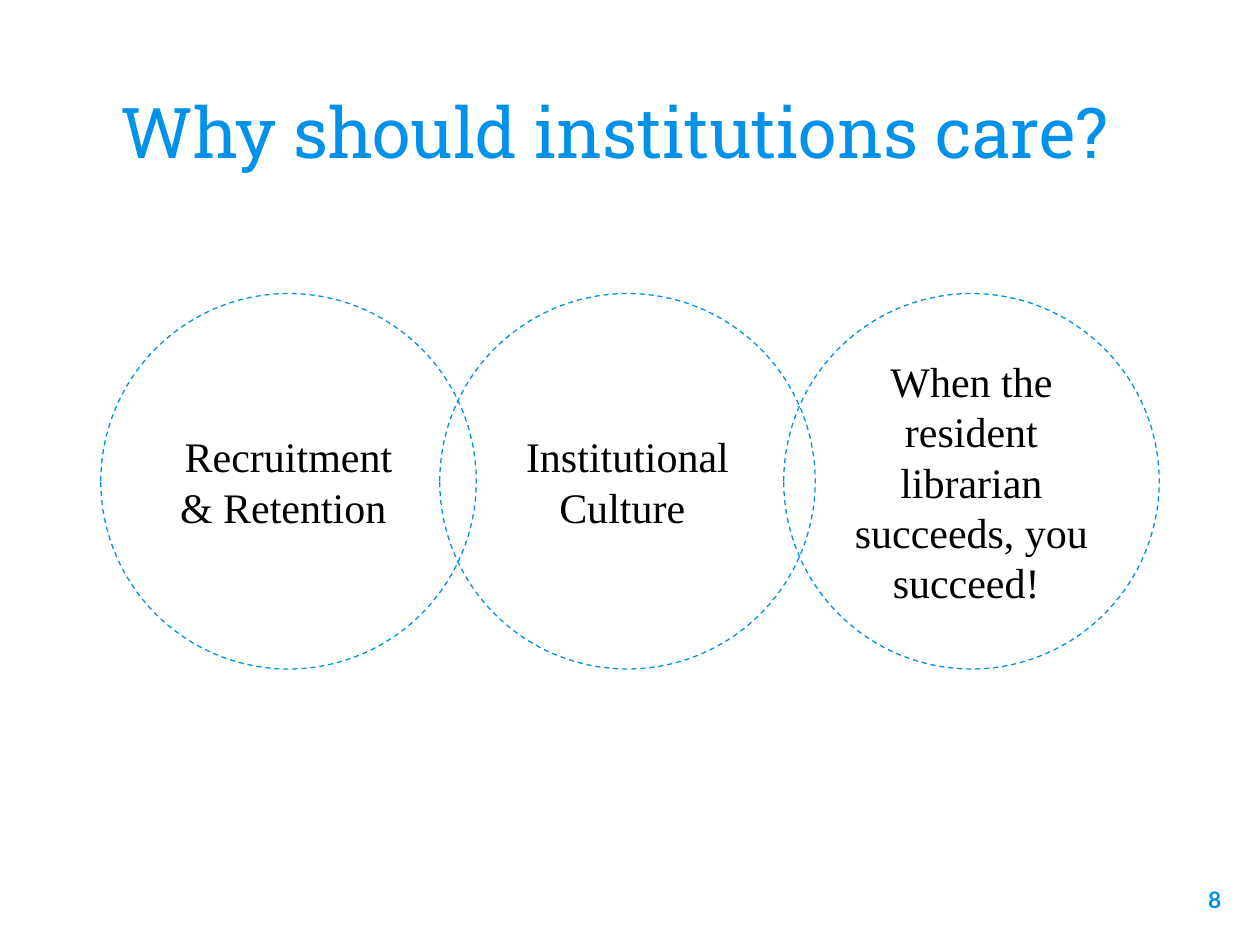
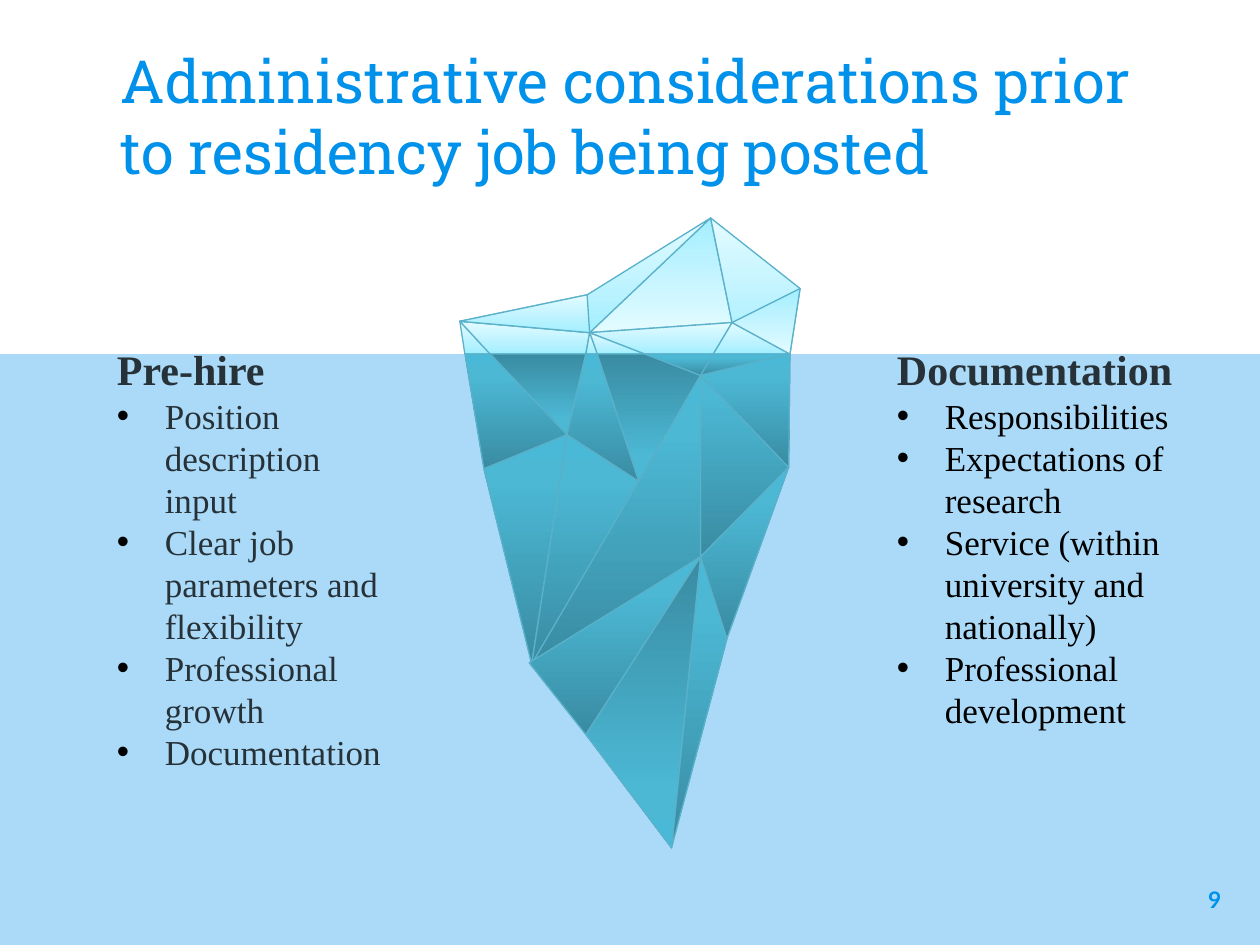
from dataclasses import dataclass

from lxml.etree import SubElement
from pptx import Presentation
from pptx.dml.color import RGBColor
from pptx.enum.dml import MSO_LINE
from pptx.enum.shapes import MSO_SHAPE
from pptx.enum.text import MSO_ANCHOR, PP_ALIGN
from pptx.oxml.ns import qn
from pptx.shapes.autoshape import Shape
from pptx.shapes.shapetree import GroupShapes
from pptx.slide import Slide
from pptx.text.text import TextFrame, _Paragraph
from pptx.util import Inches, Pt

BLUE = RGBColor(0x00, 0x91, 0xEA)
INK = RGBColor(0x26, 0x32, 0x38)
BLACK = RGBColor(0x00, 0x00, 0x00)
ICE_EDGE = RGBColor(0x5A, 0xB1, 0xC9)

ICE = (
    (0, RGBColor(0xA1, 0xEF, 0xFF)),
    (35, RGBColor(0xBB, 0xF2, 0xFF)),
    (100, RGBColor(0xE3, 0xFC, 0xFF)),
)
DEEP = (
    (0, RGBColor(0x39, 0x8B, 0xA2)),
    (80, RGBColor(0x4C, 0xB8, 0xD4)),
    (100, RGBColor(0x4A, 0xB9, 0xD8)),
)
UPWARD, DOWNWARD = 90, 270

SERIF = "Times New Roman"
HEADING = {"name": SERIF, "size": Pt(24), "bold": True}
ITEM = {"name": SERIF, "size": Pt(20), "bold": False}
CIRCLE_TEXT = {"name": SERIF, "size": Pt(24)}
NUMBER = {"name": "Lato", "size": Pt(13), "bold": True}

WATERLINE = 2.81
CIRCLE_TOP, CIRCLE_SIZE = 2.33, 2.98


@dataclass(frozen=True)
class Circle:
    left: float
    text: str


@dataclass(frozen=True)
class Column:
    left: float
    width: float
    heading: str
    items: tuple[str, ...]
    color: RGBColor


@dataclass(frozen=True)
class Facet:
    corners: str
    stops: tuple[tuple[int, RGBColor], ...] = DEEP
    angle: int = UPWARD


CIRCLES = (
    Circle(3.49, "Institutional Culture "),
    Circle(0.8, "Recruitment & Retention "),
    Circle(6.22, "When the resident librarian succeeds, you succeed! "),
)

COLUMNS = (
    Column(0.83, 2.36, "Pre-hire", (
        "Position description input",
        "Clear job parameters and flexibility",
        "Professional growth",
        "Documentation",
    ), INK),
    Column(7.02, 2.51, "Documentation", (
        "Responsibilities",
        "Expectations of research",
        "Service (within university and nationally)",
        "Professional development",
    ), BLACK),
)

POINTS = {
    "peak": (5.64, 1.73),
    "shoulder": (6.35, 2.29),
    "ridge": (5.81, 2.56),
    "saddle": (4.68, 2.64),
    "tip": (3.65, 2.55),
    "hump": (4.66, 2.34),
    "water1": (3.69, WATERLINE),
    "water2": (3.89, WATERLINE),
    "water3": (4.65, WATERLINE),
    "water4": (4.74, WATERLINE),
    "water5": (5.12, WATERLINE),
    "water6": (5.66, WATERLINE),
    "water7": (6.27, WATERLINE),
    "notch": (5.56, 2.98),
    "east": (6.26, 3.71),
    "core": (5.56, 4.42),
    "hollow": (4.5, 3.45),
    "west": (3.84, 3.72),
    "fold": (5.07, 3.82),
    "flank": (5.77, 5.07),
    "heel": (4.22, 5.27),
    "corner": (4.2, 5.26),
    "keel": (4.65, 5.83),
    "bottom": (5.33, 6.73),
}

FACETS = (
    Facet("water7 tip water2", ICE),
    Facet("peak saddle ridge", ICE, DOWNWARD),
    Facet("peak shoulder water7 ridge", ICE),
    Facet("tip water2 water1", ICE),
    Facet("saddle water3 water2 tip", ICE),
    Facet("peak saddle tip hump", ICE),
    Facet("ridge water7 water6", ICE),
    Facet("water4 saddle water5", ICE),
    Facet("hump saddle tip", ICE),
    Facet("shoulder ridge water7", ICE, DOWNWARD),
    Facet("water4 saddle water3", ICE),
    Facet("water7 east core notch"),
    Facet("hollow heel west"),
    Facet("water3 hollow water2", angle=DOWNWARD),
    Facet("core flank bottom"),
    Facet("water7 notch water6"),
    Facet("fold water4 water5 notch", angle=DOWNWARD),
    Facet("fold hollow heel"),
    Facet("notch heel core"),
    Facet("water2 hollow west water1"),
    Facet("water7 notch east"),
    Facet("hollow fold water4 water3"),
    Facet("corner core keel"),
    Facet("keel bottom core", angle=DOWNWARD),
    Facet("east flank core"),
    Facet("saddle ridge water6 water5", ICE),
    Facet("notch water6 water5"),
)


def write(para: _Paragraph, text: str, style: dict, color: RGBColor) -> None:
    span = para.add_run()
    span.text = text
    for name, value in style.items():
        setattr(span.font, name, value)
    span.font.color.rgb = color


def set_frame(frame: TextFrame, anchor: MSO_ANCHOR, margin: float = 0.1) -> None:
    values = {
        "word_wrap": True,
        "vertical_anchor": anchor,
        "margin_left": Inches(0.1),
        "margin_right": Inches(0.1),
        "margin_top": Inches(margin),
        "margin_bottom": Inches(margin),
    }
    for name, value in values.items():
        setattr(frame, name, value)


def add_box(page: Slide, left: float, top: float, width: float, height: float,
            anchor: MSO_ANCHOR = MSO_ANCHOR.TOP, margin: float = 0.1) -> TextFrame:
    box = page.shapes.add_textbox(Inches(left), Inches(top), Inches(width), Inches(height))
    set_frame(box.text_frame, anchor, margin)
    return box.text_frame


def add_title(page: Slide, text: str, top: float, size: int) -> None:
    frame = add_box(page, 0.86, top, 8.28, 1.02, MSO_ANCHOR.BOTTOM)
    write(frame.paragraphs[0], text, {"name": "Roboto Slab", "size": Pt(size)}, BLUE)


def add_number(page: Slide, number: int) -> None:
    para = add_box(page, 9.19, 6.93, 0.6, 0.57).paragraphs[0]
    para.alignment = PP_ALIGN.RIGHT
    write(para, str(number), NUMBER, BLUE)


def add_circle(page: Slide, circle: Circle) -> None:
    shape = page.shapes.add_shape(MSO_SHAPE.OVAL, Inches(circle.left), Inches(CIRCLE_TOP),
                                  Inches(CIRCLE_SIZE), Inches(CIRCLE_SIZE))
    shape.shadow.inherit = False
    shape.fill.background()
    shape.line.color.rgb = BLUE
    shape.line.width = Pt(0.75)
    shape.line.dash_style = MSO_LINE.DASH
    set_frame(shape.text_frame, MSO_ANCHOR.MIDDLE)
    para = shape.text_frame.paragraphs[0]
    para.alignment = PP_ALIGN.CENTER
    write(para, circle.text, CIRCLE_TEXT, BLACK)


def add_sea(page: Slide) -> None:
    sea = page.shapes.add_shape(MSO_SHAPE.RECTANGLE, Inches(0), Inches(WATERLINE),
                                Inches(10), Inches(7.5 - WATERLINE))
    sea.shadow.inherit = False
    sea.fill.solid()
    sea.fill.fore_color.rgb = BLUE
    sea.line.fill.background()
    color = sea._element.spPr.find(qn("a:solidFill")).find(qn("a:srgbClr"))
    SubElement(color, qn("a:alpha"), val="33000")


def fill_gradient(shape: Shape, facet: Facet) -> None:
    shape.fill.gradient()
    shape.fill.gradient_angle = facet.angle
    stop_list = shape._element.spPr.find(qn("a:gradFill")).find(qn("a:gsLst"))
    for stop in list(stop_list):
        stop_list.remove(stop)
    for position, color in facet.stops:
        stop = SubElement(stop_list, qn("a:gs"), pos=str(position * 1000))
        SubElement(stop, qn("a:srgbClr"), val=str(color))


def add_facet(shapes: GroupShapes, facet: Facet) -> None:
    start, *others = [
        (Inches(x), Inches(y)) for x, y in (POINTS[name] for name in facet.corners.split())
    ]
    builder = shapes.build_freeform(*start)
    builder.add_line_segments(others, close=True)
    shape = builder.convert_to_shape()
    shape.shadow.inherit = False
    fill_gradient(shape, facet)
    shape.line.color.rgb = ICE_EDGE
    shape.line.width = Pt(0.75)


def add_bullet(para: _Paragraph) -> None:
    properties = para._p.get_or_add_pPr()
    properties.set("marL", str(Inches(0.38)))
    properties.set("indent", str(-Inches(0.38)))
    SubElement(SubElement(properties, qn("a:buClr")), qn("a:srgbClr"), val=str(BLACK))
    SubElement(properties, qn("a:buFont"), typeface="Arial")
    SubElement(properties, qn("a:buChar"), char="•")


def add_column(page: Slide, column: Column) -> None:
    frame = add_box(page, column.left, 2.68, column.width, 3.53, margin=0.05)
    write(frame.paragraphs[0], column.heading, HEADING, INK)
    for item in column.items:
        para = frame.add_paragraph()
        add_bullet(para)
        write(para, item, ITEM, column.color)


def main() -> None:
    deck = Presentation()
    deck.slide_width, deck.slide_height = Inches(10), Inches(7.5)
    blank = deck.slide_layouts[6]

    reasons = deck.slides.add_slide(blank)
    add_title(reasons, "Why should institutions care?", 0.45, 40)
    for circle in CIRCLES:
        add_circle(reasons, circle)
    add_number(reasons, 8)

    planning = deck.slides.add_slide(blank)
    add_title(planning, "Administrative considerations prior to residency job being posted", 0.56, 34)
    add_sea(planning)
    iceberg = planning.shapes.add_group_shape()
    for facet in FACETS:
        add_facet(iceberg.shapes, facet)
    for column in COLUMNS:
        add_column(planning, column)
    add_number(planning, 9)

    deck.save("out.pptx")


if __name__ == "__main__":
    main()
